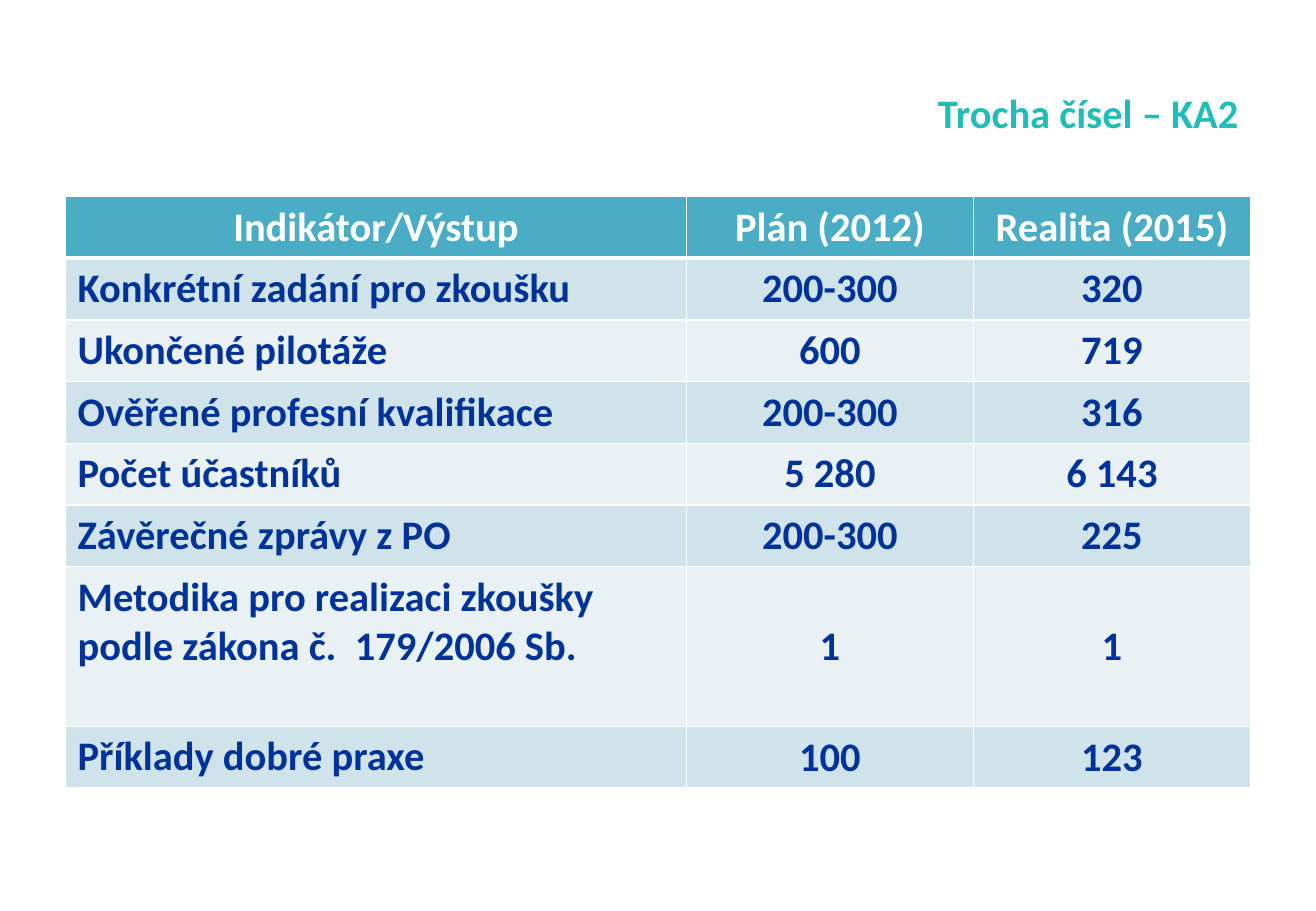
from lxml import etree
from pptx import Presentation
from pptx.dml.color import RGBColor
from pptx.enum.text import MSO_ANCHOR, PP_ALIGN
from pptx.oxml.ns import qn
from pptx.util import Cm, Pt

LEFT, CENTER, RIGHT = PP_ALIGN.LEFT, PP_ALIGN.CENTER, PP_ALIGN.RIGHT
TOP, MIDDLE = MSO_ANCHOR.TOP, MSO_ANCHOR.MIDDLE

COLORS = {
    "title": "22BCB9",
    "header": "4BACC6",
    "dark_band": "D0E3EA",
    "light_band": "E9F1F5",
    "body": "003399",
    "white": "FFFFFF",
}

ROWS = [
    ("Indikátor/Výstup", "Plán (2012)", "Realita (2015)"),
    ("Konkrétní zadání pro zkoušku", "200-300", "320"),
    ("Ukončené pilotáže", "600", "719"),
    ("Ověřené profesní kvalifikace", "200-300", "316"),
    ("Počet účastníků", "5 280", "6 143"),
    ("Závěrečné zprávy z PO", "200-300", "225"),
    ("Metodika pro realizaci zkoušky podle zákona č.  179/2006 Sb.", "1", "1"),
    ("Příklady dobré praxe", "100", "123"),
]
COL_WIDTHS = [12.98, 6, 5.79]
ROW_HEIGHT, TALL_ROW_HEIGHT, TALL_ROW = 1.29, 3.34, 6
TABLE_LEFT, TABLE_TOP = 1.37, 4.11
TABLE_WIDTH = sum(COL_WIDTHS)


def write(tf, text, color, align):
    p = tf.paragraphs[0]
    p.alignment = align
    r = p.add_run()
    r.text = text
    r.font.name = "Calibri"
    r.font.size = Pt(24)
    r.font.bold = True
    r.font.color.rgb = RGBColor.from_string(COLORS[color])


def add_borders(cell, bottom_width):
    """Draw white lines round a cell, 1 pt except for the bottom one."""
    tc_pr = cell._tc.get_or_add_tcPr()
    for side, width in (("L", 1), ("R", 1), ("T", 1), ("B", bottom_width)):
        ln = etree.SubElement(tc_pr, qn(f"a:ln{side}"), w=str(Pt(width)))
        fill = etree.SubElement(ln, qn("a:solidFill"))
        etree.SubElement(fill, qn("a:srgbClr"), val=COLORS["white"])


prs = Presentation()
prs.slide_width, prs.slide_height = Cm(27.51), Cm(19.05)
s = prs.slides.add_slide(prs.slide_layouts[6])

title = s.shapes.add_textbox(Cm(TABLE_LEFT), Cm(0.76), Cm(TABLE_WIDTH), Cm(3.18))
tf = title.text_frame
tf.word_wrap = True
tf.vertical_anchor = MIDDLE
write(tf, "Trocha čísel – KA2", "title", RIGHT)

table_height = ROW_HEIGHT * (len(ROWS) - 1) + TALL_ROW_HEIGHT
table = s.shapes.add_table(len(ROWS), len(COL_WIDTHS), Cm(TABLE_LEFT), Cm(TABLE_TOP),
                           Cm(TABLE_WIDTH), Cm(table_height)).table
for column, width in zip(table.columns, COL_WIDTHS):
    column.width = Cm(width)

for i, texts in enumerate(ROWS):
    table.rows[i].height = Cm(TALL_ROW_HEIGHT if i == TALL_ROW else ROW_HEIGHT)
    is_header = i == 0
    band = "header" if is_header else "dark_band" if i % 2 else "light_band"
    for j, text in enumerate(texts):
        cell = table.cell(i, j)
        is_label = j == 0 and not is_header
        add_borders(cell, 3 if is_header else 1)
        cell.fill.solid()
        cell.fill.fore_color.rgb = RGBColor.from_string(COLORS[band])
        cell.vertical_anchor = TOP if is_header or is_label else MIDDLE
        write(cell.text_frame, text, "white" if is_header else "body",
              LEFT if is_label else CENTER)

prs.save("out.pptx")
